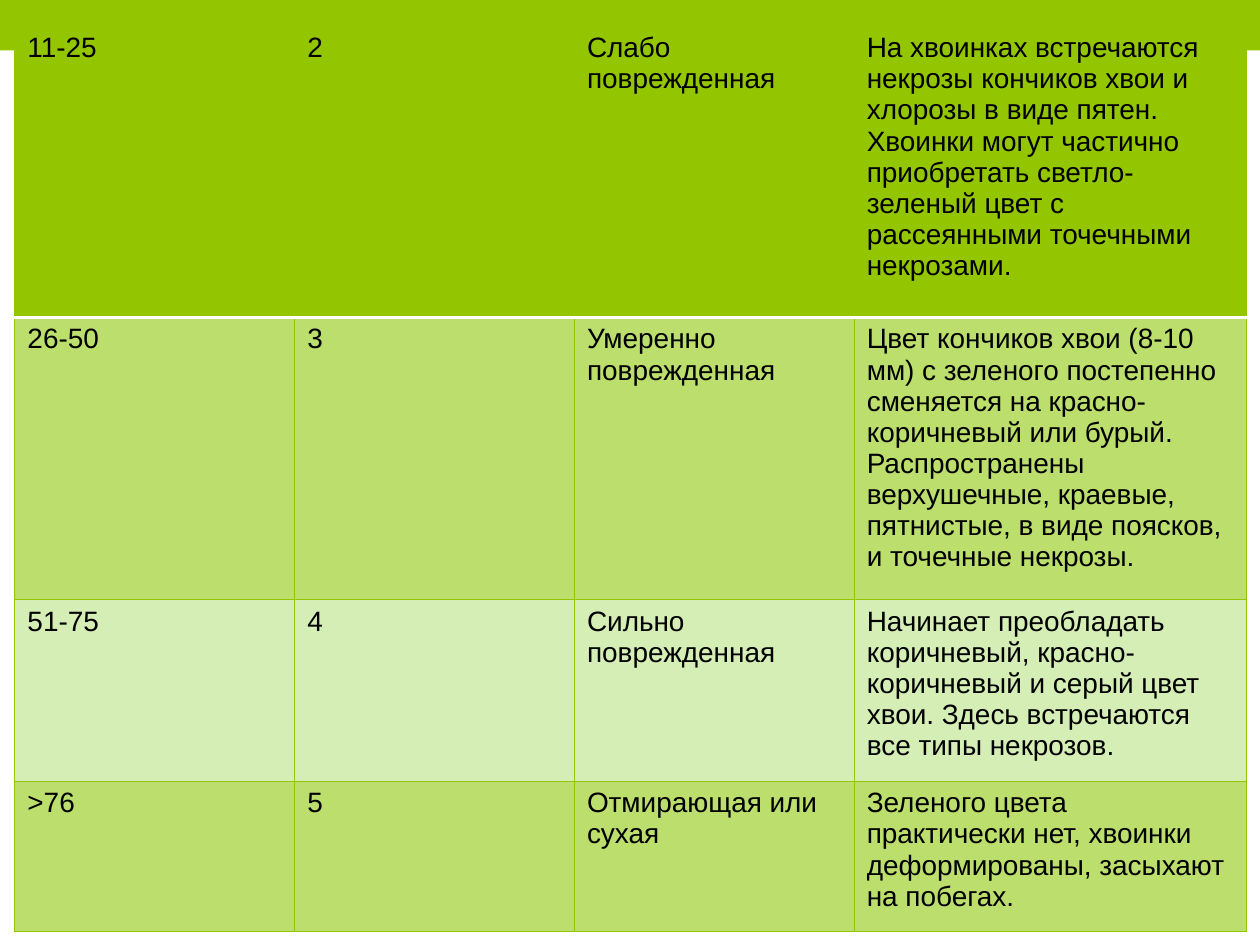
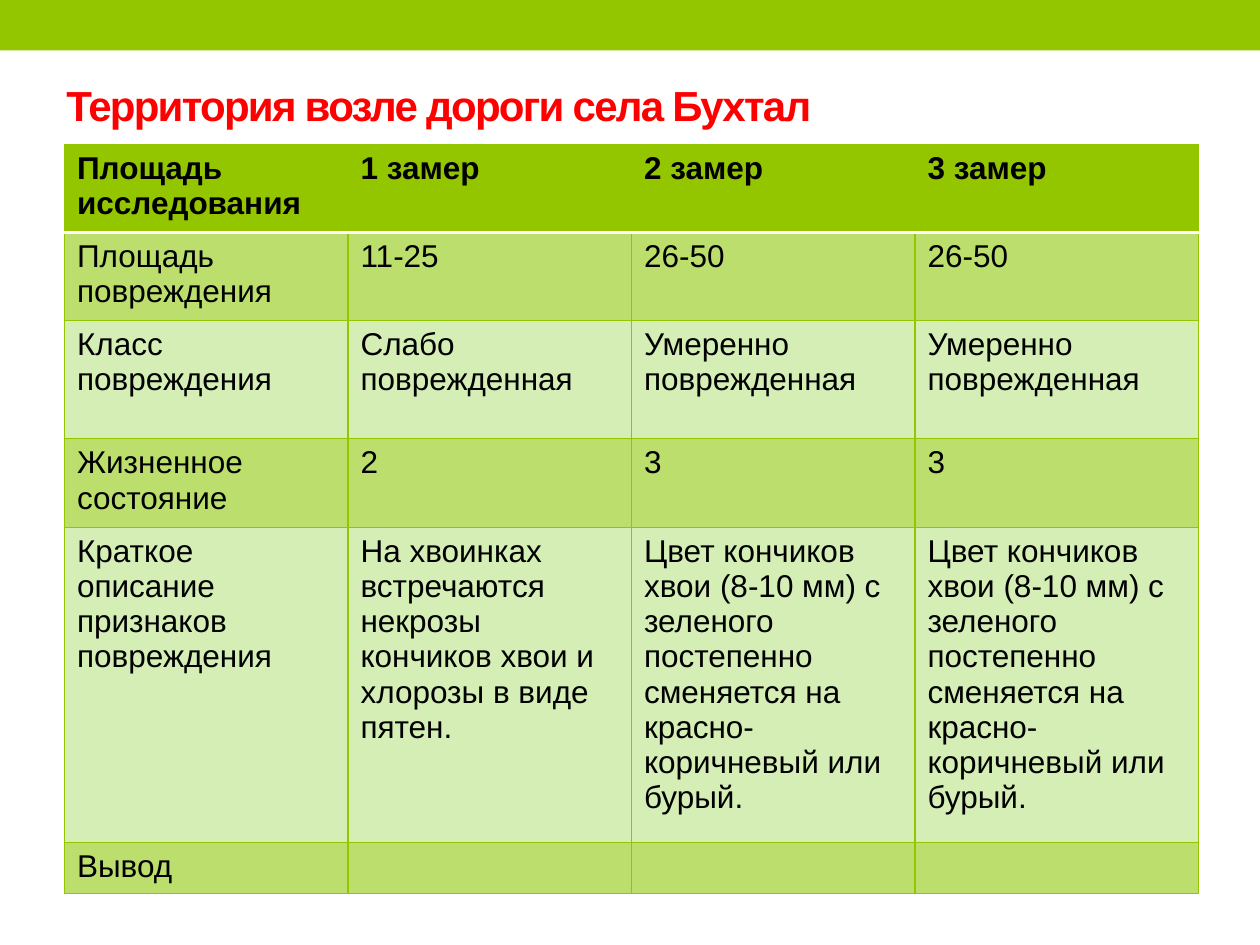
from lxml import etree
from pptx import Presentation
from pptx.dml.color import RGBColor
from pptx.enum import shapes, text
from pptx.oxml import ns
from pptx.util import Cm, Pt

# Content
DAMAGE_CLASSES = [
    ("11-25", "2", "Слабо поврежденная",
     "На хвоинках встречаются некрозы кончиков хвои и хлорозы в виде пятен. "
     "Хвоинки могут частично приобретать светло-зеленый цвет с рассеянными "
     "точечными некрозами."),
    ("26-50", "3", "Умеренно поврежденная",
     "Цвет кончиков хвои (8-10 мм) с зеленого постепенно сменяется на "
     "красно-коричневый или бурый. Распространены верхушечные, краевые, "
     "пятнистые, в виде поясков, и точечные некрозы."),
    ("51-75", "4", "Сильно поврежденная",
     "Начинает преобладать коричневый, красно-коричневый и серый цвет хвои. "
     "Здесь встречаются все типы некрозов."),
    (">76", "5", "Отмирающая или сухая",
     "Зеленого цвета практически нет, хвоинки деформированы, засыхают на побегах."),
]

ROAD_TITLE = "Территория возле дороги села Бухтал"
BROWN_TIPS = ("Цвет кончиков хвои (8-10 мм) с зеленого постепенно сменяется на "
              "красно-коричневый или бурый.")
ROAD_SAMPLES = [
    ("Площадь исследования", "1 замер", "2 замер", "3 замер"),
    ("Площадь повреждения", "11-25", "26-50", "26-50"),
    ("Класс повреждения", "Слабо поврежденная",
     "Умеренно поврежденная", "Умеренно поврежденная"),
    ("Жизненное состояние", "2", "3", "3"),
    ("Краткое описание признаков повреждения",
     "На хвоинках встречаются некрозы кончиков хвои и хлорозы в виде пятен.",
     BROWN_TIPS, BROWN_TIPS),
    ("Вывод", "", "", ""),
]

# Shared style
GREEN = RGBColor(0x94, 0xC6, 0x00)
MID_GREEN = RGBColor(0xBC, 0xDE, 0x6D)
PALE_GREEN = RGBColor(0xD5, 0xEE, 0xB6)
WHITE = RGBColor(0xFF, 0xFF, 0xFF)
BLACK = RGBColor(0x00, 0x00, 0x00)
RED = RGBColor(0xFF, 0x00, 0x00)
FONT = "Arial"
SLIDE_WIDTH, SLIDE_HEIGHT = Cm(25.4), Cm(19.05)
BAND_HEIGHT = Cm(1.02)
THIN, THICK = Pt(0.75), Pt(2.08)


def add_run(paragraph, words, size, color, bold=False):
    run = paragraph.add_run()
    run.text = words
    run.font.name = FONT
    run.font.size = Pt(size)
    run.font.bold = bold
    run.font.color.rgb = color
    return run


def add_banded_slide(presentation):
    slide = presentation.slides.add_slide(presentation.slide_layouts[6])
    band = slide.shapes.add_shape(shapes.MSO_SHAPE.RECTANGLE, 0, 0,
                                  SLIDE_WIDTH, BAND_HEIGHT)
    band.shadow.inherit = False
    band.fill.solid()
    band.fill.fore_color.rgb = GREEN
    band.line.fill.background()
    return slide


def add_title(slide, words):
    box = slide.shapes.add_textbox(Cm(1.09), Cm(0.74), Cm(22.86), Cm(2.74))
    frame = box.text_frame
    frame.word_wrap = True
    frame.vertical_anchor = text.MSO_ANCHOR.MIDDLE
    run = add_run(frame.paragraphs[0], words, 24, RED, bold=True)
    run.font._element.set("spc", "-100")


def set_border(cell, side, color, width):
    properties = cell._tc.get_or_add_tcPr()
    line = etree.SubElement(properties, ns.qn(f"a:ln{side}"), w=str(int(width)))
    fill = etree.SubElement(line, ns.qn("a:solidFill"))
    etree.SubElement(fill, ns.qn("a:srgbClr"), val=str(color))


def add_green_table(slide, rows, left, top, widths, heights, size, bold_header):
    frame = slide.shapes.add_table(len(rows), len(widths), left, top,
                                   sum(widths), sum(heights))
    table = frame.table
    for column, width in zip(table.columns, widths):
        column.width = width
    for number, (values, height) in enumerate(zip(rows, heights)):
        table.rows[number].height = height
        # Solid first row, then alternating tints
        color = GREEN if number == 0 else MID_GREEN if number % 2 else PALE_GREEN
        white_sides = {0: "B", 1: "T"}.get(number, "")
        for index, value in enumerate(values):
            cell = table.cell(number, index)
            for side in "LRTB":
                if side in white_sides:
                    set_border(cell, side, WHITE, THICK)
                else:
                    set_border(cell, side, GREEN, THIN)
            cell.fill.solid()
            cell.fill.fore_color.rgb = color
            if value:
                add_run(cell.text_frame.paragraphs[0], value, size, BLACK,
                        bold=bold_header and number == 0)


def main():
    presentation = Presentation()
    presentation.slide_width = SLIDE_WIDTH
    presentation.slide_height = SLIDE_HEIGHT

    # Damage classes, continued
    slide = add_banded_slide(presentation)
    add_green_table(slide, DAMAGE_CLASSES, Cm(0.3), Cm(0.53),
                    [Cm(5.64)] * 3 + [Cm(7.9)],
                    [Cm(h) for h in (5.87, 5.69, 3.66, 3.02)], 16, False)

    # Samples taken by the road
    slide = add_banded_slide(presentation)
    add_title(slide, ROAD_TITLE)
    add_green_table(slide, ROAD_SAMPLES, Cm(1.3), Cm(2.91),
                    [Cm(22.86) // 4] * 4,
                    [Cm(h) for h in (1.69, 1.69, 2.38, 1.69, 5.92, 1.03)], 18, True)

    presentation.save("out.pptx")


if __name__ == "__main__":
    main()
